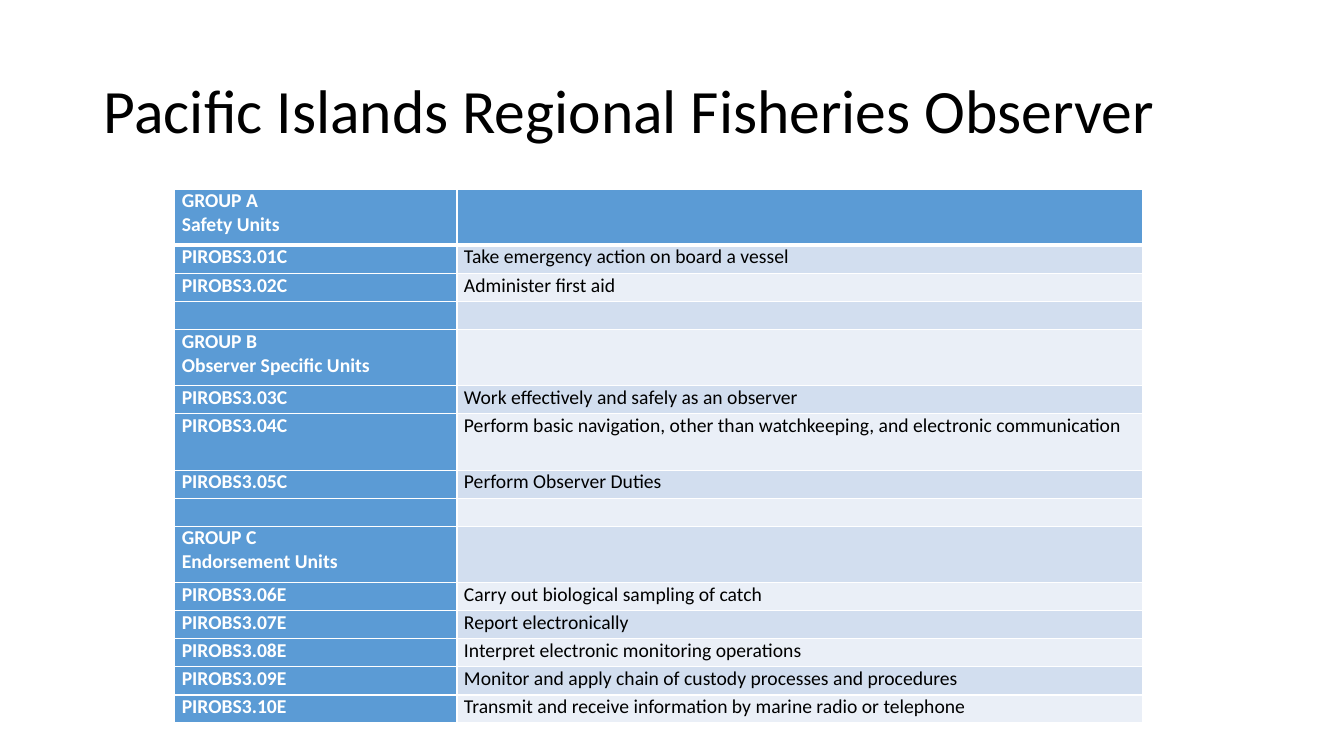
import dataclasses

import lxml.etree
import pptx
import pptx.dml.color
import pptx.enum.text
import pptx.oxml.ns
import pptx.util


@dataclasses.dataclass(frozen=True)
class Theme:
    """Colours, font and type sizes of the slide."""
    font: str = "Calibri"
    title_size: int = 44
    body_size: int = 14
    ink: str = "000000"
    paper: str = "FFFFFF"
    accent: str = "5B9BD5"
    bands: tuple = ("EAEFF7", "D2DEEF")
    thin: int = 1
    thick: int = 3


THEME = Theme()
WIDTH = pptx.util.Inches(13.33)
HEIGHT = pptx.util.Inches(7.5)
INSET = pptx.util.Inches(0.07)
TITLE_BOX = (0.07, 0.05, 0.86, 0.2)
TABLE_LEFT, TABLE_TOP = 0.13, 0.25
COLUMN_SHARES = (0.21, 0.51)
LINE_SHARE = 0.04
UNITS = (
    ("GROUP A\nSafety Units", "", 2),
    ("PIROBS3.01C", "Take emergency action on board a vessel", 1),
    ("PIROBS3.02C", "Administer first aid", 1),
    ("", "", 1),
    ("GROUP B\nObserver Specific Units", "", 2),
    ("PIROBS3.03C", "Work effectively and safely as an observer", 1),
    ("PIROBS3.04C", "Perform basic navigation, other than watchkeeping, "
                    "and electronic communication", 2),
    ("PIROBS3.05C", "Perform Observer Duties", 1),
    ("", "", 1),
    ("GROUP C\nEndorsement Units", "", 2),
    ("PIROBS3.06E", "Carry out biological sampling of catch", 1),
    ("PIROBS3.07E", "Report electronically", 1),
    ("PIROBS3.08E", "Interpret electronic monitoring operations", 1),
    ("PIROBS3.09E", "Monitor and apply chain of custody processes and procedures", 1),
    ("PIROBS3.10E", "Transmit and receive information by marine radio or telephone", 1),
)


def across(share):
    """Turn a share of the slide width into a length."""
    return round(WIDTH * share)


def down(share):
    """Turn a share of the slide height into a length."""
    return round(HEIGHT * share)


def rgb(value):
    """Make a colour from its hexadecimal text."""
    return pptx.dml.color.RGBColor.from_string(value)


def format_text(text_frame, size, colour, bold=False):
    """Give all runs, and empty paragraphs, the type of the theme."""
    for paragraph in text_frame.paragraphs:
        for run in paragraph.runs:
            run.font.name = THEME.font
            run.font.size = pptx.util.Pt(size)
            run.font.bold = bold
            run.font.color.rgb = rgb(colour)
        if not paragraph.runs:
            lxml.etree.SubElement(paragraph._p, pptx.oxml.ns.qn("a:endParaRPr"),
                                  sz=str(size * 100))


def add_title(slide, text):
    """Add the slide title."""
    left, top, width, height = TITLE_BOX
    box = slide.shapes.add_textbox(across(left), down(top), across(width), down(height))
    text_frame = box.text_frame
    text_frame.word_wrap = True
    text_frame.vertical_anchor = pptx.enum.text.MSO_ANCHOR.MIDDLE
    text_frame.text = text
    text_frame.paragraphs[0].line_spacing = 0.9
    format_text(text_frame, THEME.title_size, THEME.ink)


def add_border(cell, side, points):
    """Draw one side of a cell's border."""
    qn = pptx.oxml.ns.qn
    line = lxml.etree.SubElement(cell._tc.get_or_add_tcPr(), qn("a:ln" + side),
                                 w=str(pptx.util.Pt(points)))
    fill = lxml.etree.SubElement(line, qn("a:solidFill"))
    lxml.etree.SubElement(fill, qn("a:srgbClr"), val=THEME.paper)


def fill_cell(cell, text, row, column):
    """Write and style one cell by its place in the table."""
    cell.margin_left = cell.margin_right = INSET
    cell.margin_top = cell.margin_bottom = 0
    heavy_side = {0: "B", 1: "T"}.get(row)
    for side in "LRTB":
        add_border(cell, side, THEME.thick if side == heavy_side else THEME.thin)
    is_heading = row == 0 or column == 0
    cell.fill.solid()
    cell.fill.fore_color.rgb = rgb(THEME.accent if is_heading else THEME.bands[row % 2])
    cell.text_frame.text = text
    format_text(cell.text_frame, THEME.body_size,
                THEME.paper if is_heading else THEME.ink, is_heading)


def add_unit_table(slide, units):
    """Add the table of unit codes and titles."""
    line_count = sum(lines for code, title, lines in units)
    frame = slide.shapes.add_table(
        len(units), len(COLUMN_SHARES), across(TABLE_LEFT), down(TABLE_TOP),
        across(sum(COLUMN_SHARES)), down(LINE_SHARE * line_count))
    table = frame.table
    table.first_row = table.horz_banding = False
    for column, share in zip(table.columns, COLUMN_SHARES):
        column.width = across(share)
    for row, (code, title, lines) in enumerate(units):
        table.rows[row].height = down(LINE_SHARE * lines * 0.93)
        for column, text in enumerate((code, title)):
            fill_cell(table.cell(row, column), text, row, column)


def main():
    """Build and save the slide."""
    presentation = pptx.Presentation()
    presentation.slide_width = WIDTH
    presentation.slide_height = HEIGHT
    slide = presentation.slides.add_slide(presentation.slide_layouts[6])
    add_title(slide, "Pacific Islands Regional Fisheries Observer")
    add_unit_table(slide, UNITS)
    presentation.save("out.pptx")


if __name__ == "__main__":
    main()
